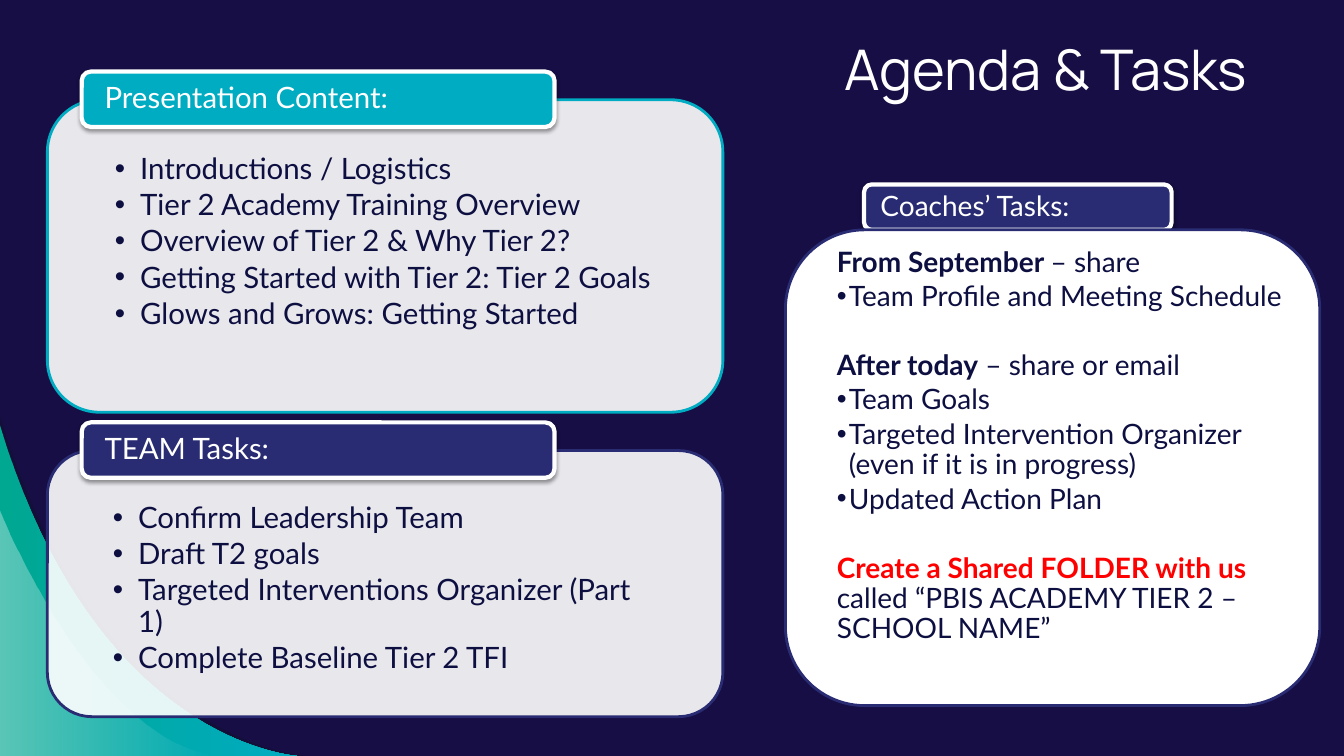
from dataclasses import dataclass

from lxml import etree
from pptx import Presentation
from pptx.dml.color import RGBColor
from pptx.enum.shapes import MSO_SHAPE
from pptx.enum.text import MSO_ANCHOR, MSO_AUTO_SIZE, PP_ALIGN
from pptx.oxml.ns import qn
from pptx.util import Inches, Pt


@dataclass(frozen=True)
class Theme:
    night: str = "160E44"
    shade: str = "12102F"
    teal: str = "00ACC2"
    green: str = "00A791"
    navy: str = "292C73"
    ink: str = "0D0F41"
    white: str = "FFFFFF"
    red: str = "FF0000"
    body_font: str = "Lato"
    title_font: str = "Manrope"
    title_size: float = 40
    left_size: float = 21
    right_size: float = 20


THEME = Theme()

CONTENT = [
    "Introductions / Logistics",
    "Tier 2 Academy Training Overview",
    "Overview of Tier 2 & Why Tier 2?",
    "Getting Started with Tier 2: Tier 2 Goals",
    "Glows and Grows: Getting Started",
]
TEAM = [
    "Confirm Leadership Team",
    "Draft T2 goals",
    "Targeted Interventions Organizer (Part 1)",
    "Complete Baseline Tier 2 TFI",
]
# Each group: bold lead, lead colour, rest of the line, bullets below it
COACHES = [
    ("From September ", THEME.ink, "– share", ["Team Profile and Meeting Schedule"]),
    ("After today", THEME.ink, " – share or email",
     ["Team Goals",
      "Targeted Intervention Organizer (even if it is in progress)",
      "Updated Action Plan"]),
    ("Create a Shared FOLDER with us ", THEME.red,
     "called “PBIS ACADEMY TIER 2 – SCHOOL NAME”", []),
]


def rgb(color):
    return RGBColor.from_string(color)


def paint(sp, *stops):
    """Fill with one (colour, opacity %) stop, or a left-to-right gradient of two."""
    if len(stops) == 1:
        sp.fill.solid()
        colors = [sp.fill.fore_color]
    else:
        sp.fill.gradient()
        sp.fill.gradient_angle = 0
        colors = [stop.color for stop in sp.fill.gradient_stops]
    for target, (color, _) in zip(colors, stops):
        target.rgb = rgb(color)
    nodes = list(sp.element.spPr.iter(qn("a:srgbClr")))
    for node, (_, opacity) in zip(nodes, stops):
        if opacity < 100:
            etree.SubElement(node, qn("a:alpha"), val=str(opacity * 1000))


def outline(sp, color, width):
    sp.line.color.rgb = rgb(color)
    sp.line.width = Pt(width)


def add_swoosh(slide, start, control1, control2, end, *stops):
    """Fill the area between a Bézier curve and the bottom left corner."""
    steps = 40
    points = []
    for i in range(steps + 1):
        t = i / steps
        weights = ((1 - t) ** 3, 3 * t * (1 - t) ** 2, 3 * t * t * (1 - t), t ** 3)
        points.append(tuple(
            Inches(sum(w * c for w, c in zip(weights, axis)))
            for axis in zip(start, control1, control2, end)))
    builder = slide.shapes.build_freeform(*points[0], scale=1.0)
    builder.add_line_segments(points[1:] + [(0, Inches(7.5))], close=True)
    sp = builder.convert_to_shape()
    sp.shadow.inherit = False
    paint(sp, *stops)
    sp.line.fill.background()


def add_round_rect(slide, box, color, opacity, line_color, line_width):
    sp = slide.shapes.add_shape(MSO_SHAPE.ROUNDED_RECTANGLE, *map(Inches, box))
    sp.shadow.inherit = False
    paint(sp, (color, opacity))
    outline(sp, line_color, line_width)
    return sp


def add_drop_shadow(sp):
    effects = sp.element.spPr.find(qn("a:effectLst"))
    shadow = etree.SubElement(
        effects, qn("a:outerShdw"), blurRad=str(Pt(3.1)), dist=str(Pt(1.6)),
        dir="5400000", rotWithShape="0")
    color = etree.SubElement(shadow, qn("a:srgbClr"), val="000000")
    etree.SubElement(color, qn("a:alpha"), val="38000")


def set_frame(sp, insets, anchor):
    tf = sp.text_frame
    tf.word_wrap = True
    tf.auto_size = MSO_AUTO_SIZE.NONE
    tf.vertical_anchor = anchor
    (tf.margin_left, tf.margin_top,
     tf.margin_right, tf.margin_bottom) = map(Inches, insets)
    return tf


def set_font(font, name, size, color):
    font.name = name
    font.size = Pt(size)
    font.color.rgb = rgb(color)


def add_label(slide, box, text, color, size, inset):
    sp = add_round_rect(slide, box, color, 100, THEME.white, 3)
    add_drop_shadow(sp)
    tf = set_frame(sp, (inset, 0, inset, 0), MSO_ANCHOR.MIDDLE)
    p = tf.paragraphs[0]
    p.text = text
    p.alignment = PP_ALIGN.LEFT
    p.line_spacing = 0.9
    set_font(p.font, THEME.body_font, size, THEME.white)


def place_text(slide, sp, box, insets, anchor):
    """Move a placeholder to its box, in front of the shapes drawn so far."""
    sp.left, sp.top, sp.width, sp.height = map(Inches, box)
    slide.shapes.element.append(sp.element)
    return set_frame(sp, insets, anchor)


def add_line(tf, runs, size, indent=0, gap=0):
    """Add a paragraph of (text, bold, colour) runs; an indent gives it a bullet."""
    p = tf.paragraphs[0] if not tf.text else tf.add_paragraph()
    p.alignment = PP_ALIGN.LEFT
    p.line_spacing = 0.9
    p.space_before = Pt(gap)
    p.space_after = Pt(0.15 * size)
    set_font(p.font, THEME.body_font, size, THEME.ink)
    pPr = p._p.get_or_add_pPr()
    pPr.set("marL", str(Inches(indent)))
    pPr.set("indent", str(-Inches(indent)))
    bullet = (etree.Element(qn("a:buChar"), char="•") if indent
              else etree.Element(qn("a:buNone")))
    pPr.find(qn("a:defRPr")).addprevious(bullet)
    for text, bold, color in runs:
        r = p.add_run()
        r.text = text
        r.font.bold = bold
        set_font(r.font, THEME.body_font, size, color)


def add_left_panel(slide, sp, top, height, color, label, items, text_box):
    add_round_rect(slide, (0.47, top, 6.7, height), THEME.white, 90, color, 2)
    add_label(slide, (0.81, top - 0.28, 4.69, 0.55), label, color,
              THEME.left_size, 0.2)
    tf = place_text(slide, sp, text_box, (0.52, 0.39, 0.52, 0.16), MSO_ANCHOR.TOP)
    for item in items:
        add_line(tf, [(item, False, THEME.ink)], THEME.left_size, 0.25)


def add_coaches_panel(slide, sp):
    size = THEME.right_size
    add_label(slide, (8.57, 1.83, 3.05, 0.45), "Coaches’ Tasks:", THEME.navy, size, 0.14)
    add_round_rect(slide, (7.79, 2.28, 5.3, 4.72), THEME.white, 100, THEME.navy, 2)
    tf = place_text(slide, sp, (7.96, 2.14, 5.13, 4.26),
                    (0.34, 0.32, 0.34, 0.11), MSO_ANCHOR.TOP)
    for i, (lead, color, rest, bullets) in enumerate(COACHES):
        add_line(tf, [(lead, True, color), (rest, False, THEME.ink)], size,
                 gap=24.6 if i else 0)
        for item in bullets:
            add_line(tf, [(item, False, THEME.ink)], size, 0.12)


def main():
    prs = Presentation()
    prs.slide_width, prs.slide_height = Inches(13.33), Inches(7.5)
    slide = prs.slides.add_slide(prs.slide_layouts.get_by_name("Comparison"))
    slide.background.fill.solid()
    slide.background.fill.fore_color.rgb = rgb(THEME.night)
    holders = {sp.placeholder_format.idx: sp for sp in slide.placeholders}
    unused = holders[1].element
    unused.getparent().remove(unused)

    add_swoosh(slide, (0, 4.13), (0.98, 7.39), (3.03, 7.5), (3.03, 7.5),
               (THEME.shade, 54))
    add_swoosh(slide, (0, 4.22), (0.95, 7.39), (2.95, 7.5), (2.95, 7.5),
               (THEME.green, 100), (THEME.teal, 100))
    add_swoosh(slide, (0, 5.06), (0, 5.06), (0.91, 7.35), (2.16, 7.5),
               (THEME.white, 36), (THEME.white, 0))

    add_left_panel(slide, holders[2], 0.99, 3.1, THEME.teal,
                   "Presentation Content:", CONTENT, (0.62, 1.14, 6.39, 2.8))
    add_left_panel(slide, holders[4], 4.47, 2.64, THEME.navy,
                   "TEAM Tasks:", TEAM, (0.6, 4.6, 6.44, 2.38))

    tf = place_text(slide, holders[0], (2.21, 0.22, 10.26, 0.92),
                    (0.1, 0.1, 0.1, 0.1), MSO_ANCHOR.MIDDLE)
    p = tf.paragraphs[0]
    p.text = "Agenda & Tasks"
    p.alignment = PP_ALIGN.RIGHT
    set_font(p.font, THEME.title_font, THEME.title_size, THEME.white)

    add_coaches_panel(slide, holders[3])
    prs.save("out.pptx")


if __name__ == "__main__":
    main()
